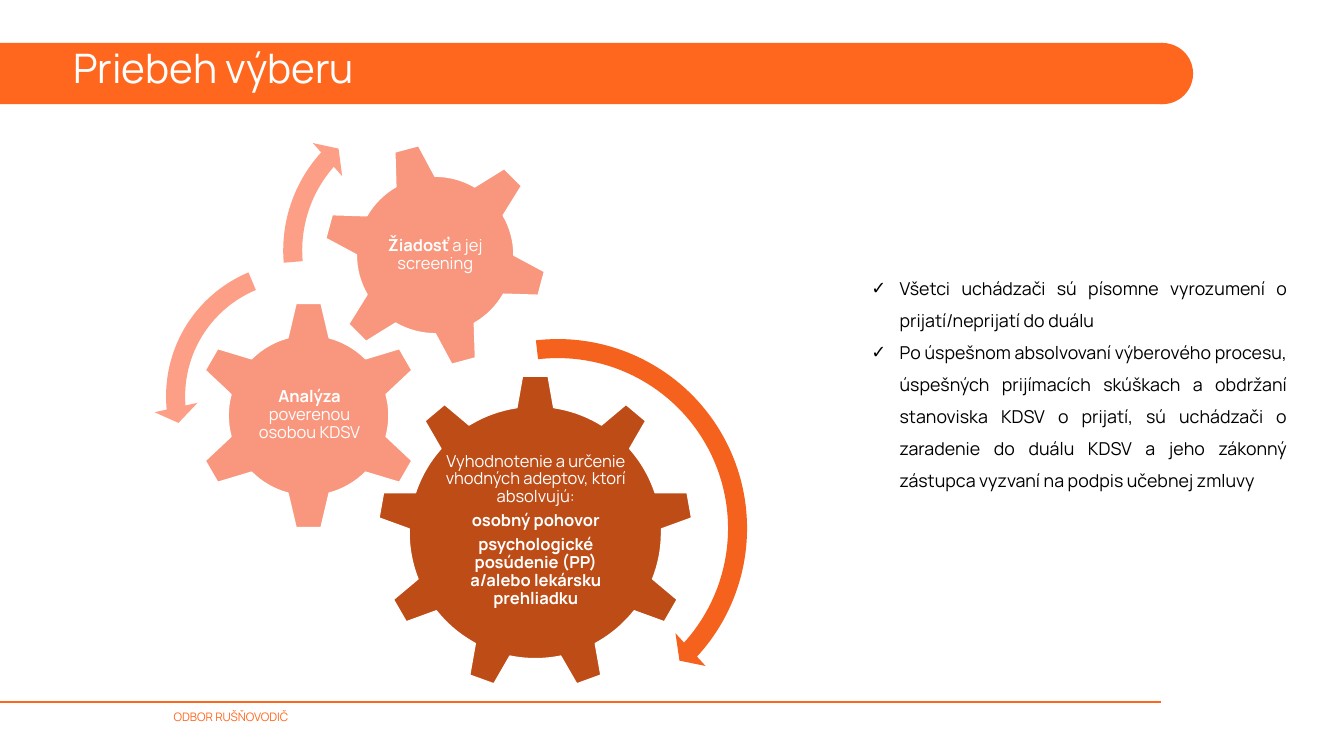
from lxml import etree
from pptx import Presentation
from pptx.dml.color import RGBColor
from pptx.enum.shapes import MSO_CONNECTOR, MSO_SHAPE as Preset
from pptx.enum.text import MSO_ANCHOR as Anchor, MSO_AUTO_SIZE as AutoSize, PP_ALIGN as Align
from pptx.oxml.ns import qn
from pptx.util import Inches, Pt

FONT = "Manrope"
COLORS = {
    "brand": "FF671F",
    "dark gear": "BD4C17",
    "light gear": "F9977E",
    "dark arrow": "F4621E",
    "light arrow": "FD9F86",
    "white": "FFFFFF",
    "black": "000000",
}

# Gears: preset, left, top, size, rotation, colour
GEARS = [
    (Preset.GEAR_9, 4.13, 4.1, 3.45, 0, "dark gear"),
    (Preset.GEAR_6, 2.12, 3.29, 2.51, 0, "light gear"),
    (Preset.GEAR_6, 3.53, 1.56, 2.46, 345, "light gear"),
]

# Gear labels: box, then paragraphs of (text, bold) runs
LABELS = [
    ((4.83, 4.91, 2.06, 1.78), [
        [("Vyhodnotenie a určenie vhodných adeptov, ktorí absolvujú:", False)],
        [("osobný pohovor", True)],
        [("psychologické posúdenie (PP) a/alebo lekársku prehliadku", True)],
    ]),
    ((2.76, 3.92, 1.25, 1.24), [[("Analýza ", True), ("poverenou osobou KDSV", False)]]),
    ((4.07, 2.1, 1.38, 1.38), [[("Žiadosť", True), (" a jej screening", False)]]),
]

# Arrows: preset, left, top, size, adjustments, colour
ARROWS = [
    (Preset.CIRCULAR_ARROW, 3.89, 3.57, 4.42,
     (0.047, 2.99, 25.439, 158.028, 0.055), "dark arrow"),
    (Preset.LEFT_CIRCULAR_ARROW, 1.68, 2.73, 3.21,
     (0.065, 4.3, 104.891, 148.378, 0.075), "light arrow"),
    (Preset.CIRCULAR_ARROW, 2.96, 1.01, 3.46,
     (0.06, 3.941, 133.138, 105.082, 0.07), "light arrow"),
]

NOTES = [
    "Všetci uchádzači sú písomne vyrozumení o prijatí/neprijatí do duálu",
    "Po úspešnom absolvovaní výberového procesu, úspešných prijímacích skúškach "
    "a obdržaní stanoviska KDSV o prijatí, sú uchádzači o zaradenie do duálu KDSV "
    "a jeho zákonný zástupca vyzvaní na podpis učebnej zmluvy",
]


def rgb(name):
    return RGBColor.from_string(COLORS[name])


def style_font(font, size, color, bold=False):
    font.name = FONT
    font.size = Pt(size)
    font.bold = bold
    font.color.rgb = rgb(color)


def place(shape, box):
    shape.left, shape.top, shape.width, shape.height = map(Inches, box)


def add_filled_shape(slide, preset, box, color, outline=None):
    shape = slide.shapes.add_shape(preset, *map(Inches, box))
    shape.shadow.inherit = False
    shape.fill.solid()
    shape.fill.fore_color.rgb = rgb(color)
    if outline:
        shape.line.color.rgb = rgb(outline)
        shape.line.width = Pt(1)
    else:
        shape.line.fill.background()
    return shape


def add_frame(slide):
    add_filled_shape(slide, Preset.RECTANGLE, (0, 0.47, 12.72, 0.67), "brand")
    add_filled_shape(slide, Preset.OVAL, (12.38, 0.47, 0.67, 0.67), "brand")
    footer_line = slide.shapes.add_connector(
        MSO_CONNECTOR.STRAIGHT, 0, Inches(7.68), Inches(12.7), Inches(7.68))
    footer_line.line.color.rgb = rgb("brand")
    footer_line.line.width = Pt(1)
    properties = footer_line.element.find(qn("p:spPr"))
    etree.SubElement(properties, qn("a:effectLst"))


def add_footer(slide):
    frame = slide.shapes.add_textbox(*map(Inches, (1.8, 7.74, 5.52, 0.23))).text_frame
    frame.word_wrap = True
    paragraph = frame.paragraphs[0]
    paragraph.text = "ODBOR RUŠŇOVODIČ"
    paragraph.line_spacing = 0.8
    style_font(paragraph.runs[0].font, 9.2, "brand")


def fill_title(title):
    # Bring the title in front of the orange band
    title.element.getparent().append(title.element)
    place(title, (0.7, 0.49, 11.45, 0.56))
    frame = title.text_frame
    frame.text = "Priebeh výberu"
    frame.auto_size = AutoSize.NONE
    frame.vertical_anchor = Anchor.MIDDLE
    paragraph = frame.paragraphs[0]
    paragraph.alignment = Align.LEFT
    paragraph.line_spacing = 0.9
    style_font(paragraph.runs[0].font, 32, "white")


def fill_notes(body):
    place(body, (8.93, 2.87, 5.25, 2.93))
    frame = body.text_frame
    frame.text = "\n".join(NOTES)
    frame.auto_size = AutoSize.NONE
    frame.vertical_anchor = Anchor.TOP
    for paragraph in frame.paragraphs:
        properties = paragraph._p.get_or_add_pPr()
        properties.set("marL", str(Inches(0.81)))
        properties.set("indent", str(Inches(-0.31)))
        etree.SubElement(properties, qn("a:buChar"), char="✓")
        paragraph.alignment = Align.JUSTIFY
        paragraph.line_spacing = 1.5
        paragraph.space_before = Pt(0)
        style_font(paragraph.runs[0].font, 14, "black")


def add_gear_label(slide, box, paragraphs):
    frame = slide.shapes.add_textbox(*map(Inches, box)).text_frame
    frame.word_wrap = True
    frame.vertical_anchor = Anchor.MIDDLE
    frame.margin_left = frame.margin_right = Inches(0.02)
    frame.margin_top = frame.margin_bottom = Inches(0.02)
    frame.text = "\n" * (len(paragraphs) - 1)
    for paragraph, runs in zip(frame.paragraphs, paragraphs):
        paragraph.alignment = Align.CENTER
        paragraph.line_spacing = 0.9
        paragraph.space_after = Pt(4.7)
        for text, bold in runs:
            run = paragraph.add_run()
            run.text = text
            style_font(run.font, 13, "white", bold)


def add_gears(slide):
    for preset, left, top, size, rotation, color in GEARS:
        gear = add_filled_shape(slide, preset, (left, top, size, size), color, "white")
        gear.rotation = rotation
    for box, paragraphs in LABELS:
        add_gear_label(slide, box, paragraphs)


def add_arrows(slide):
    for preset, left, top, size, adjustments, color in ARROWS:
        arrow = add_filled_shape(slide, preset, (left, top, size, size), color)
        for index, value in enumerate(adjustments):
            arrow.adjustments[index] = value


def main():
    presentation = Presentation()
    presentation.slide_width = Inches(14.7)
    presentation.slide_height = Inches(8.27)
    slide = presentation.slides.add_slide(presentation.slide_layouts[1])

    # Band, title and footer
    add_frame(slide)
    fill_title(slide.shapes.title)
    add_footer(slide)

    # Notes on the right
    fill_notes(slide.placeholders[1])

    # Selection process
    add_gears(slide)
    add_arrows(slide)

    presentation.save("out.pptx")


if __name__ == "__main__":
    main()
